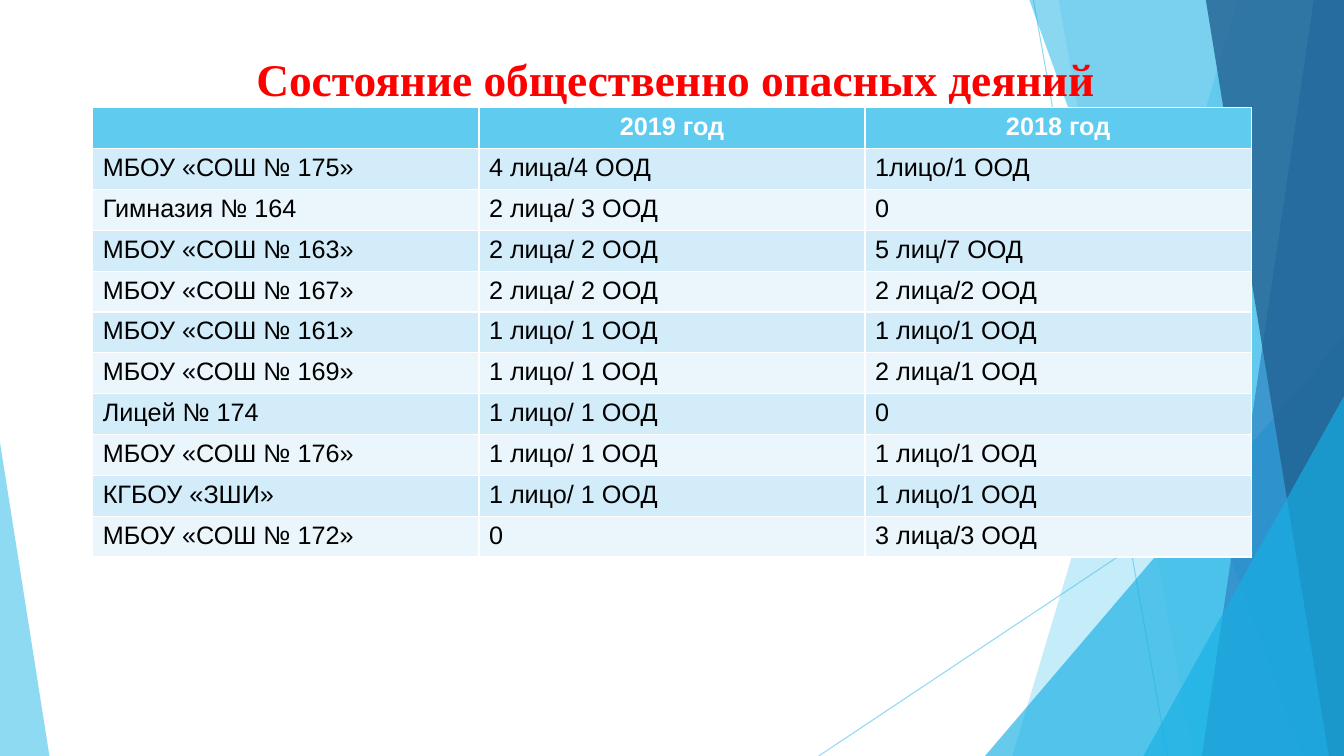
from lxml.etree import SubElement
from pptx import Presentation
from pptx.dml.color import RGBColor
from pptx.enum.shapes import MSO_CONNECTOR, MSO_SHAPE
from pptx.enum.text import MSO_ANCHOR, MSO_AUTO_SIZE, PP_ALIGN
from pptx.oxml.ns import qn
from pptx.util import Inches, Pt

WIDTH, HEIGHT = 13.33, 7.5
TITLE_ONLY = 5

WHITE = RGBColor(0xFF, 0xFF, 0xFF)
BLACK = RGBColor(0x00, 0x00, 0x00)
RED = RGBColor(0xFF, 0x00, 0x00)
SKY = RGBColor(0x5F, 0xCB, 0xEF)
CYAN = RGBColor(0x17, 0xB0, 0xE4)
BLUE = RGBColor(0x2E, 0x83, 0xC3)
NAVY = RGBColor(0x22, 0x62, 0x92)
BANDS = RGBColor(0xD2, 0xEC, 0xF9), RGBColor(0xEA, 0xF6, 0xFC)

# Start and end of each thin line
RAYS = [((10.25, 0), (11.58, HEIGHT)), ((WIDTH, 4.03), (8.12, HEIGHT))]

# Facets reach the right edge: left end at top, left end at bottom, colour, opacity
LIGHT_FACETS = [(12.28, 10.04, SKY, 36), (10.5, 11.83, SKY, 20)]
DARK_FACETS = [
    (10.21, 12.91, CYAN, 50),
    (13.03, 11.92, BLUE, 70),
    (11.96, 13.18, NAVY, 80),
]

HEADER = ["", "2019 год", "2018 год"]
SCHOOLS = [
    ["МБОУ «СОШ № 175»", "4 лица/4 ООД", "1лицо/1 ООД"],
    ["Гимназия № 164", "2 лица/ 3 ООД", "0"],
    ["МБОУ «СОШ № 163»", "2 лица/ 2 ООД", "5 лиц/7 ООД"],
    ["МБОУ «СОШ № 167»", "2 лица/ 2 ООД", "2 лица/2 ООД"],
    ["МБОУ «СОШ № 161»", "1 лицо/ 1 ООД", "1 лицо/1 ООД"],
    ["МБОУ «СОШ № 169»", "1 лицо/ 1 ООД", "2 лица/1 ООД"],
    ["Лицей № 174", "1 лицо/ 1 ООД", "0"],
    ["МБОУ «СОШ № 176»", "1 лицо/ 1 ООД", "1 лицо/1 ООД"],
    ["КГБОУ «ЗШИ»", "1 лицо/ 1 ООД", "1 лицо/1 ООД"],
    ["МБОУ «СОШ № 172»", "0", "3 лица/3 ООД"],
]


def set_opacity(fill_parent, percent):
    """Make the solid fill found under an element partly transparent."""
    color = fill_parent.find(qn("a:solidFill"))[0]
    SubElement(color, qn("a:alpha"), val=str(percent * 1000))


def paint(shape, color, opacity):
    shape.shadow.inherit = False
    shape.fill.solid()
    shape.fill.fore_color.rgb = color
    shape.line.fill.background()
    set_opacity(shape.element.spPr, opacity)


def add_ray(slide, start, end):
    ray = slide.shapes.add_connector(
        MSO_CONNECTOR.STRAIGHT, *map(Inches, start + end))
    ray.line.color.rgb = SKY
    ray.line.width = Pt(0.75)
    properties = ray.element.spPr
    set_opacity(properties.find(qn("a:ln")), 70)
    SubElement(properties, qn("a:effectLst"))


def add_facet(slide, top_left, bottom_left, color, opacity):
    builder = slide.shapes.build_freeform(
        Inches(top_left), 0, scale=1.0)
    corners = [(WIDTH, 0), (WIDTH, HEIGHT), (bottom_left, HEIGHT)]
    builder.add_line_segments([(Inches(x), Inches(y)) for x, y in corners])
    paint(builder.convert_to_shape(), color, opacity)


def add_corner(slide, left, top, width, apex, color, opacity):
    """Add a triangle that stands on the slide's bottom edge."""
    corner = slide.shapes.add_shape(
        MSO_SHAPE.ISOSCELES_TRIANGLE,
        *map(Inches, (left, top, width, HEIGHT - top)))
    corner.adjustments[0] = apex
    paint(corner, color, opacity)


def add_backdrop(slide):
    for start, end in RAYS:
        add_ray(slide, start, end)
    for facet in LIGHT_FACETS:
        add_facet(slide, *facet)
    add_corner(slide, 9.77, 3.33, WIDTH - 9.77, 1, CYAN, 66)
    for facet in DARK_FACETS:
        add_facet(slide, *facet)
    add_corner(slide, 11.34, 3.93, WIDTH - 11.34, 1, CYAN, 66)
    add_corner(slide, 0, 4.39, 0.49, 0, SKY, 70)


def format_text(paragraph, font_name, size, color, bold, alignment):
    paragraph.alignment = alignment
    font = paragraph.font
    font.name, font.size, font.bold = font_name, Pt(size), bold
    font.color.rgb = color


def set_title(slide, text):
    """Fill the title placeholder and bring it in front of the backdrop."""
    title = slide.shapes.title
    title.left, title.top = Inches(0.98), Inches(0.4)
    title.width, title.height = Inches(11.44), Inches(0.55)
    frame = title.text_frame
    frame.text = text
    frame.auto_size = MSO_AUTO_SIZE.NONE
    frame.vertical_anchor = MSO_ANCHOR.TOP
    frame.margin_top = Inches(0.11)
    format_text(frame.paragraphs[0], "Times New Roman", 32.4, RED, True,
                PP_ALIGN.CENTER)
    title.element.getparent().append(title.element)


def add_table(slide, rows):
    frame = slide.shapes.add_table(
        len(rows), len(rows[0]),
        Inches(0.92), Inches(1.07), Inches(11.49), Inches(4.46))
    for row_index, row in enumerate(rows):
        is_header = row_index == 0
        for column_index, text in enumerate(row):
            cell = frame.table.cell(row_index, column_index)
            cell.text = text
            cell.fill.solid()
            cell.fill.fore_color.rgb = (
                SKY if is_header else BANDS[(row_index - 1) % 2])
            format_text(cell.text_frame.paragraphs[0], "Arial", 18,
                        WHITE if is_header else BLACK, is_header,
                        PP_ALIGN.CENTER if is_header else PP_ALIGN.LEFT)


def main():
    presentation = Presentation()
    presentation.slide_width = Inches(WIDTH)
    presentation.slide_height = Inches(HEIGHT)
    slide = presentation.slides.add_slide(
        presentation.slide_layouts[TITLE_ONLY])
    add_backdrop(slide)
    set_title(slide, "Состояние общественно опасных деяний")
    add_table(slide, [HEADER] + SCHOOLS)
    presentation.save("out.pptx")


if __name__ == "__main__":
    main()
